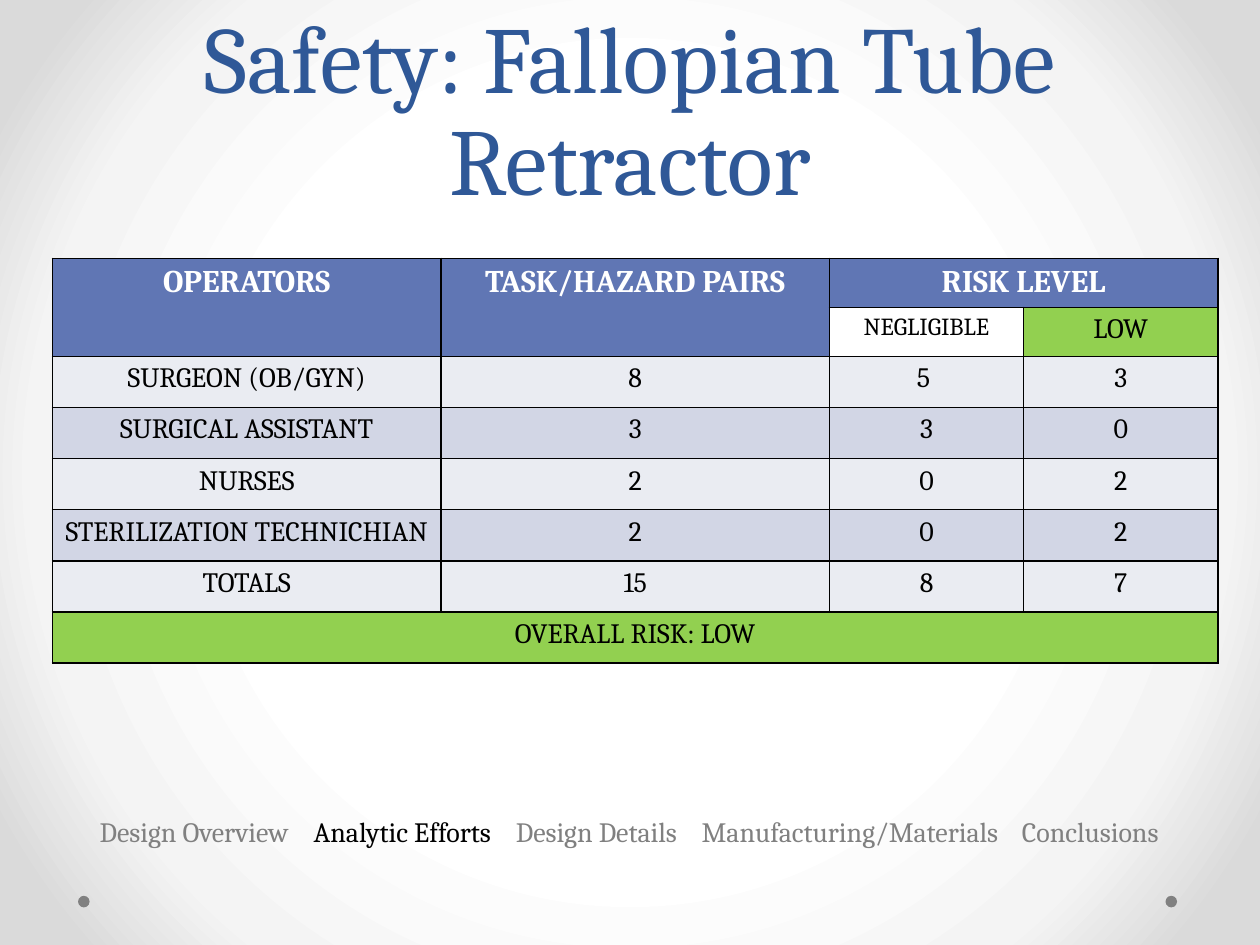
from pptx import Presentation
from pptx.dml.color import RGBColor
from pptx.enum.shapes import MSO_SHAPE
from pptx.enum.text import MSO_ANCHOR, PP_ALIGN
from pptx.oxml import parse_xml
from pptx.oxml.ns import nsdecls
from pptx.util import Pt

FONT = "Cambria"
NAVY = RGBColor(0x2F, 0x58, 0x97)
BLUE = RGBColor(0x60, 0x76, 0xB4)
PALE = RGBColor(0xEA, 0xEC, 0xF2)
MID = RGBColor(0xD2, 0xD6, 0xE5)
GREEN = RGBColor(0x92, 0xD0, 0x50)
WHITE = RGBColor(0xFF, 0xFF, 0xFF)
BLACK = RGBColor(0, 0, 0)
GRAY = RGBColor(0x80, 0x80, 0x80)

TITLE = "Safety: Fallopian Tube Retractor"
ROWS = [
    ("OPERATORS", "TASK/HAZARD PAIRS", "RISK LEVEL", ""),
    ("", "", "NEGLIGIBLE", "LOW"),
    ("SURGEON (OB/GYN)", "8", "5 ", "3"),
    ("SURGICAL ASSISTANT", "3", "3", "0"),
    ("NURSES", "2", "0", "2"),
    ("STERILIZATION TECHNICHIAN", "2", "0", "2"),
    ("TOTALS", "15", "8", "7"),
    ("OVERALL RISK: LOW", "", "", ""),
]
MERGES = [((0, 0), (1, 0)), ((0, 1), (1, 1)), ((0, 2), (0, 3)), ((7, 0), (7, 3))]
COL_WIDTHS = [222, 222, 111, 111]
ROW_HEIGHTS = [28, 28] + [29.25] * 6
SECTIONS = ["Design Overview", "Analytic Efforts", "Design Details",
            "Manufacturing/Materials", "Conclusions"]
CURRENT = "Analytic Efforts"
SECTION_TABS = [122.3, 237.8, 344, 527]
BACKGROUND_STOPS = [(50, "FFFFFF"), (76, "F4F4F4"), (92, "DADADA")]
DOT_LEFTS = [44.6, 666]


def style(r, size, color, bold=False):
    r.font.name = FONT
    r.font.size = Pt(size)
    r.font.bold = bold
    r.font.color.rgb = color


def set_background(s):
    stops = "".join(f'<a:gs pos="{pos * 1000}"><a:srgbClr val="{color}"/></a:gs>'
                    for pos, color in BACKGROUND_STOPS)
    s._element.cSld.insert(0, parse_xml(
        f'<p:bg {nsdecls("p", "a")}><p:bgPr><a:gradFill rotWithShape="1">'
        f'<a:gsLst>{stops}</a:gsLst><a:path path="circle">'
        '<a:fillToRect l="50000" t="50000" r="50000" b="50000"/></a:path>'
        '</a:gradFill><a:effectLst/></p:bgPr></p:bg>'))


def add_borders(cell):
    tc_pr = cell._tc.get_or_add_tcPr()
    for side in ("lnL", "lnR", "lnT", "lnB"):
        tc_pr.append(parse_xml(
            f'<a:{side} {nsdecls("a")} w="12700"><a:solidFill>'
            f'<a:srgbClr val="{BLACK}"/></a:solidFill></a:{side}>'))


def cell_look(row, col):
    if row == 0 or (row == 1 and col < 2):
        return BLUE, WHITE, 18
    if row == 1:
        return (WHITE, BLACK, 14) if col == 2 else (GREEN, BLACK, 16)
    if row == len(ROWS) - 1:
        return GREEN, BLACK, 16
    return (MID if row % 2 else PALE), BLACK, 16


def add_risk_table(s):
    table = s.shapes.add_table(len(ROWS), len(COL_WIDTHS), Pt(30), Pt(147.6),
                               Pt(sum(COL_WIDTHS)), Pt(sum(ROW_HEIGHTS))).table
    for column, width in zip(table.columns, COL_WIDTHS):
        column.width = Pt(width)
    for row, height in zip(table.rows, ROW_HEIGHTS):
        row.height = Pt(height)
    for i, texts in enumerate(ROWS):
        for j, text in enumerate(texts):
            cell = table.cell(i, j)
            fill, color, size = cell_look(i, j)
            add_borders(cell)
            cell.fill.solid()
            cell.fill.fore_color.rgb = fill
            if text:
                cell.text_frame.text = text
                p = cell.text_frame.paragraphs[0]
                p.alignment = PP_ALIGN.CENTER
                style(p.runs[0], size, color, i == 0)
    for first, last in MERGES:
        table.cell(*first).merge(table.cell(*last))


def add_section_bar(s):
    tf = s.shapes.add_textbox(Pt(15), Pt(462.2), Pt(690), Pt(26.6)).text_frame
    tf.word_wrap = True
    tf.margin_left = Pt(42)
    p = tf.paragraphs[0]
    tabs = "".join(f'<a:tab pos="{int(Pt(x))}" algn="l"/>' for x in SECTION_TABS)
    p._p.get_or_add_pPr().append(
        parse_xml(f'<a:tabLst {nsdecls("a")}>{tabs}</a:tabLst>'))
    for i, section in enumerate(SECTIONS):
        r = p.add_run()
        r.text = ("\t" if i else "") + section
        style(r, 16, BLACK if section == CURRENT else GRAY)


def main():
    prs = Presentation()
    prs.slide_width, prs.slide_height = Pt(720), Pt(540)
    s = prs.slides.add_slide(prs.slide_layouts[5])
    set_background(s)

    for left in DOT_LEFTS:
        dot = s.shapes.add_shape(MSO_SHAPE.OVAL, Pt(left), Pt(511.9), Pt(6.6), Pt(6.6))
        dot.shadow.inherit = False
        dot.fill.solid()
        dot.fill.fore_color.rgb = GRAY
        dot.line.fill.background()

    title = s.shapes.title
    title.left, title.top, title.width, title.height = Pt(36), Pt(0), Pt(648), Pt(126)
    tf = title.text_frame
    tf.text = TITLE
    tf.word_wrap = True
    tf.vertical_anchor = MSO_ANCHOR.BOTTOM
    p = tf.paragraphs[0]
    p.alignment = PP_ALIGN.CENTER
    p.line_spacing = Pt(58)
    style(p.runs[0], 54, NAVY)

    add_risk_table(s)
    add_section_bar(s)
    prs.save("out.pptx")


if __name__ == "__main__":
    main()
